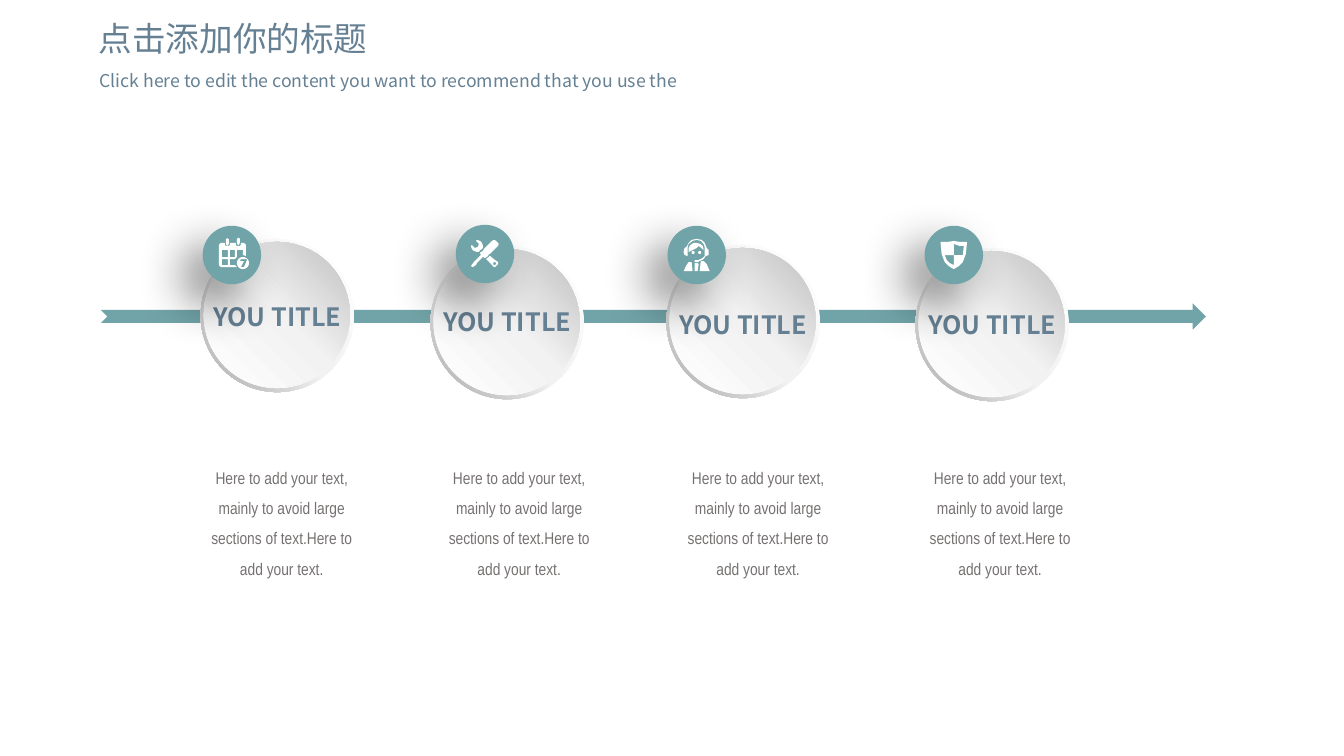
from copy import deepcopy
from dataclasses import dataclass
from math import cos, radians, sin

from lxml.etree import SubElement
from pptx import Presentation
from pptx.dml.color import RGBColor
from pptx.enum.shapes import MSO_SHAPE
from pptx.enum.text import MSO_ANCHOR, PP_ALIGN
from pptx.oxml.ns import qn
from pptx.util import Inches, Pt

COLORS = {
    "teal": "71A4A8", "slate": "658093", "gray": "767171", "white": "FFFFFF",
    "pale": "F2F2F2", "silver": "BFBFBF", "steel": "A6A6A6", "black": "000000",
}
HEAD_FONT = "Noto Sans CJK JP"
DISC_FONT = "Noto Sans CJK SC"
BODY_FONT = "Arial Narrow"
BODY = "Here to add your text, mainly to avoid large sections of text.Here to add your text."

Points = list[tuple[float, float]]


def circle(cx: float, cy: float, r: float) -> Points:
    return [(cx + r * cos(radians(a)), cy + r * sin(radians(a))) for a in range(0, 360, 15)]


def box(x1: float, y1: float, x2: float, y2: float) -> Points:
    return [(x1, y1), (x2, y1), (x2, y2), (x1, y2)]


def ring(x: float, y: float) -> Points:
    return [(x + 1, y), (x + 2, y), (x + 3, y + 1), (x + 3, y + 5),
            (x + 2, y + 7), (x + 1, y + 7), (x, y + 5), (x, y + 1)]


CALENDAR = [
    ring(18, 0), ring(7, 0.5),
    [(2, 5), (6, 5), (6, 7), (7, 8), (10, 8), (11, 7), (11, 5), (17, 5), (17, 7),
     (18, 8), (21, 8), (22, 7), (22, 5), (25, 5), (27, 7), (27, 18), (24, 17),
     (24, 12), (18, 12), (18, 19), (16, 21), (11, 21), (11, 27), (16, 27),
     (18, 29), (2, 29), (0, 27), (0, 7)],
    box(3, 12, 9, 19), box(11, 12, 16, 19), box(3, 21, 9, 27),
    circle(24, 25, 6),
    [(22, 21), (28, 21), (28, 22), (25, 29), (22, 29), (25, 23), (21, 23)],
]
TOOLS = [
    circle(23.5, 23.5, 1.5),
    [(18, 16), (18, 17), (15, 19), (20, 24), (23, 27), (24, 27), (27, 24),
     (27, 22), (24, 20), (19, 16)],
    [(10, 10), (12, 8), (12, 6), (11, 3), (9, 1), (6, 0), (5, 1), (8, 4), (7, 7),
     (4, 8), (1, 5), (0, 6), (1, 9), (3, 11), (6, 12), (8, 12), (9, 10)],
    [(27, 3), (25, 1), (23, 0), (21, 1), (13, 9), (12, 11), (10, 12), (9, 13),
     (10, 15), (4, 21), (3, 22), (0, 26), (2, 27), (5, 25), (6, 23), (12, 17),
     (14, 18), (16, 17), (17, 16), (18, 14), (19, 14), (27, 6), (27.5, 4)],
]
AGENT = [
    [(8, 1), (5, 4), (3, 8), (1, 9), (0, 13), (1, 16), (4, 17), (4, 9), (5, 5),
     (9, 2), (13, 1), (17, 2), (20, 5), (21, 8), (21, 17), (19, 19), (15, 21),
     (15, 22), (16, 22), (20, 20), (22, 17), (25, 16), (25, 11), (23, 9),
     (21, 4), (18, 1), (13, 0)],
    [(5, 13), (5, 9), (7, 6), (10, 4), (13, 4), (17, 5), (19, 7), (20, 11),
     (15, 7), (13, 9), (9, 11)],
    circle(9.5, 13.5, 1.5), circle(16, 13.5, 1.5), box(11, 21, 15, 23),
    [(18, 22), (20, 22), (23, 25), (26, 32), (16, 32), (17, 23)],
    [(8, 23), (9, 32), (0, 32), (3, 26), (5, 23)],
    [(11, 24), (14, 24), (15, 25), (14, 32), (11, 32)],
]
SHIELD = [
    [(0, 1), (7, 1), (13, 0), (19, 1), (26, 1), (26, 3), (25, 13), (22, 21),
     (18, 25), (13, 28), (8, 25), (4, 21), (1, 13), (0, 3)],
    [(13, 14), (22, 14), (23, 5), (19, 5), (13, 3)],
    [(13, 24), (13, 14), (4, 14), (6, 19), (9, 22)],
]


@dataclass
class Step:
    disc_x: float
    disc_y: float
    title_y: float
    badge_x: float
    badge_y: float
    icon_x: float
    icon_y: float
    icon: list[Points]
    body_x: float
    body_w: float = 1.66


STEPS = [
    Step(1.99, 2.37, 2.94, 2.01, 2.24, 2.17, 2.36, CALENDAR, 1.98, 1.63),
    Step(4.27, 2.44, 2.99, 4.52, 2.23, 4.67, 2.38, TOOLS, 4.32),
    Step(6.61, 2.43, 3.02, 6.62, 2.24, 6.78, 2.37, AGENT, 6.69),
    Step(9.08, 2.46, 3.02, 9.17, 2.24, 9.33, 2.39, SHIELD, 9.09),
]


def rgb(name: str) -> RGBColor:
    return RGBColor.from_string(COLORS[name])


def add_shape(shapes, kind: MSO_SHAPE, x: float, y: float, w: float, h: float):
    sp = shapes.add_shape(kind, Inches(x), Inches(y), Inches(w), Inches(h))
    sp.shadow.inherit = False
    sp.line.fill.background()
    return sp


def fill_solid(sp, color: str) -> None:
    sp.fill.solid()
    sp.fill.fore_color.rgb = rgb(color)


def fill_gradient(sp, angle: float, stops: list[tuple[float, str]]) -> None:
    sp.fill.gradient()
    sp.fill.gradient_angle = angle
    gs_lst = sp._element.spPr.find(qn("a:gradFill")).find(qn("a:gsLst"))
    gs_lst.append(deepcopy(gs_lst[0]))
    for stop, (position, color) in zip(sp.fill.gradient_stops, stops):
        stop.position = position
        stop.color.rgb = rgb(color)


def add_shadow(sp) -> None:
    effects = sp._element.spPr.find(qn("a:effectLst"))
    shadow = SubElement(effects, qn("a:outerShdw"), blurRad=str(Pt(35)), dist=str(Pt(20)),
                        dir=str(135 * 60000), algn="tr", rotWithShape="0")
    color = SubElement(shadow, qn("a:srgbClr"), val=COLORS["black"])
    SubElement(color, qn("a:alpha"), val="50000")


def add_text(shapes, text: str, x: float, y: float, w: float, h: float, size: float,
             font: str, color: str, align: PP_ALIGN = PP_ALIGN.LEFT, spacing: float = 1.0,
             bold: bool = False, wrap: bool = True):
    tb = shapes.add_textbox(Inches(x), Inches(y), Inches(w), Inches(h))
    tf = tb.text_frame
    tf.word_wrap = wrap
    p = tf.paragraphs[0]
    p.text = text
    p.alignment = align
    p.line_spacing = spacing
    p.font.size = Pt(size)
    p.font.bold = bold
    p.font.name = font
    p.font.color.rgb = rgb(color)
    SubElement(p._p.pPr.find(qn("a:defRPr")), qn("a:ea"), typeface=font)
    return tf


def add_heading(shapes, text: str, x: float, y: float, h: float, size: float) -> None:
    tf = add_text(shapes, text, x, y, 8.62, h, size, HEAD_FONT, "slate", spacing=0.9)
    tf.vertical_anchor = MSO_ANCHOR.MIDDLE


def add_body(shapes, step: Step) -> None:
    tf = add_text(shapes, BODY, step.body_x, 4.54, step.body_w, 1.2, 12, BODY_FONT,
                  "gray", PP_ALIGN.CENTER, 1.5)
    tf.margin_left = tf.margin_right = tf.margin_top = tf.margin_bottom = 0


def add_disc(shapes, step: Step) -> None:
    group = shapes.add_group_shape().shapes
    x, y = step.disc_x, step.disc_y
    rim = add_shape(group, MSO_SHAPE.DONUT, x, y, 1.52, 1.52)
    rim.adjustments[0] = 0.05
    fill_gradient(rim, 225, [(0, "white"), (0.55, "pale"), (1, "steel")])
    face = add_shape(group, MSO_SHAPE.OVAL, x + 0.03, y + 0.03, 1.45, 1.45)
    fill_gradient(face, 45, [(0, "white"), (0.51, "pale"), (1, "silver")])
    add_text(group, "YOU TITLE", x + 0.01, step.title_y, 1.5, 0.42, 18, DISC_FONT,
             "slate", PP_ALIGN.CENTER, bold=True, wrap=False)


def add_badge(shapes, step: Step) -> None:
    badge = add_shape(shapes, MSO_SHAPE.OVAL, step.badge_x, step.badge_y, 0.58, 0.58)
    fill_solid(badge, "teal")
    add_shadow(badge)


def add_icon(shapes, step: Step) -> None:
    outlines = [[(x * 100, y * 100) for x, y in points] for points in step.icon]
    builder = shapes.build_freeform(*outlines[0][0], scale=Inches(0.01) / 100)
    for points in outlines:
        builder.move_to(*points[0])
        builder.add_line_segments(points[1:], close=True)
    sp = builder.convert_to_shape(Inches(step.icon_x), Inches(step.icon_y))
    sp.shadow.inherit = False
    sp.line.fill.background()
    fill_solid(sp, "white")


def main() -> None:
    prs = Presentation()
    prs.slide_width, prs.slide_height = Inches(13.33), Inches(7.5)
    shapes = prs.slides.add_slide(prs.slide_layouts[6]).shapes
    arrow = add_shape(shapes, MSO_SHAPE.NOTCHED_RIGHT_ARROW, 1, 3.01, 10.96, 0.26)
    fill_solid(arrow, "teal")
    for draw in (add_body, add_disc, add_badge, add_icon):
        for step in STEPS:
            draw(shapes, step)
    add_heading(shapes, "点击添加你的标题", 0.88, 0.17, 0.47, 24)
    add_heading(shapes, "Click here to edit the content you want to recommend that you use the",
                0.89, 0.65, 0.33, 12.6)
    prs.save("out.pptx")


if __name__ == "__main__":
    main()
